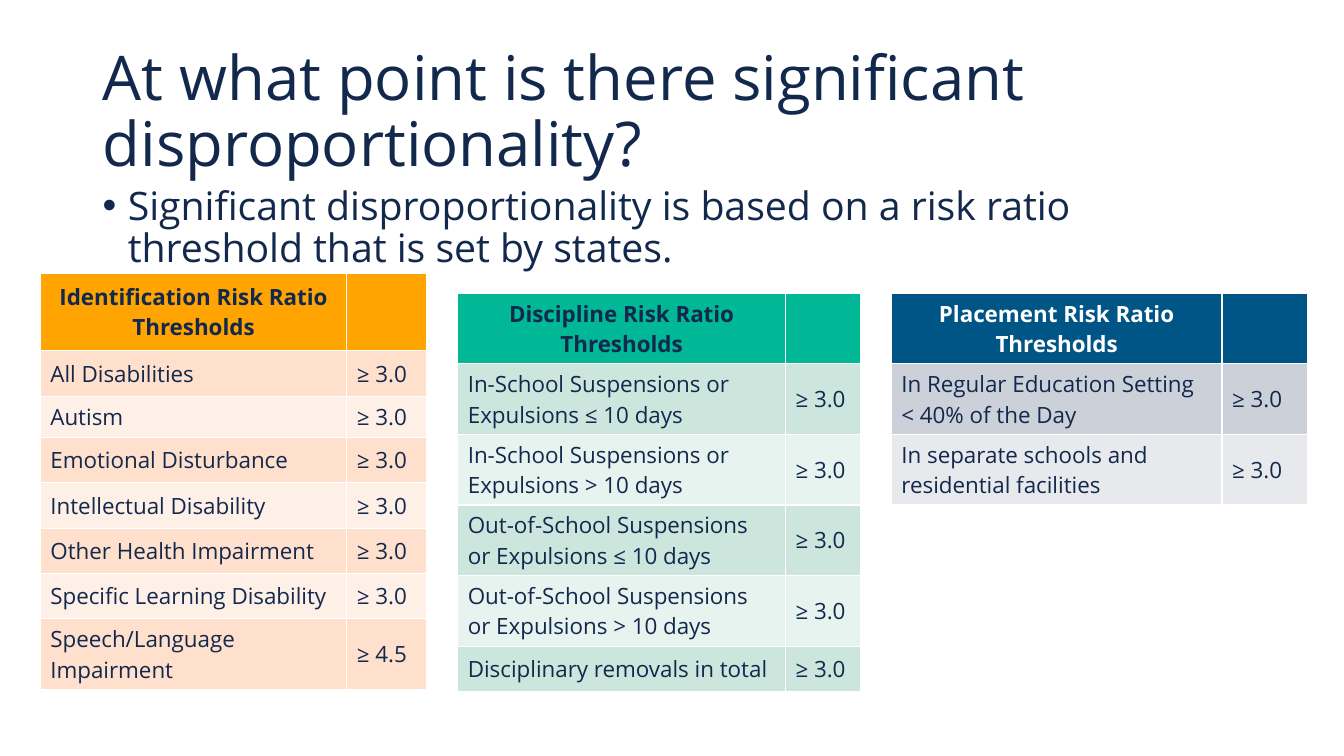
from pptx import Presentation, util as u
from pptx.dml.color import RGBColor
from pptx.enum import text as t
from pptx.oxml import parse_xml
from pptx.oxml.ns import nsdecls

PX = 9144
FONT = "Open Sans"
COLORS = {
    "navy": "12284C", "white": "FFFFFF",
    "orange": "FFA400", "peach": "FFE0CC", "cream": "FFF0E7",
    "green": "00B796", "mint": "CCE6DD", "pale mint": "E7F3EF",
    "blue": "005587", "gray": "CCD1D9", "pale gray": "E7E9ED",
}
IDENTIFICATION = [
    ("Identification Risk Ratio Thresholds", ""),
    ("All Disabilities", "≥ 3.0"),
    ("Autism", "≥ 3.0"),
    ("Emotional Disturbance", "≥ 3.0"),
    ("Intellectual Disability", "≥ 3.0"),
    ("Other Health Impairment", "≥ 3.0"),
    ("Specific Learning Disability", "≥ 3.0"),
    ("Speech/Language Impairment", "≥ 4.5"),
]
DISCIPLINE = [
    ("Discipline Risk Ratio Thresholds", ""),
    ("In-School Suspensions or Expulsions ≤ 10 days", "≥ 3.0"),
    ("In-School Suspensions or Expulsions > 10 days", "≥ 3.0"),
    ("Out-of-School Suspensions or Expulsions ≤ 10 days", "≥ 3.0"),
    ("Out-of-School Suspensions or Expulsions > 10 days", "≥ 3.0"),
    ("Disciplinary removals in total", "≥ 3.0"),
]
PLACEMENT = [
    ("Placement Risk Ratio Thresholds", ""),
    ("In Regular Education Setting\v< 40% of the Day", "≥ 3.0"),
    ("In separate schools and residential facilities", "≥ 3.0"),
]


def px(*lengths):
    """Turn pixel lengths into EMU."""
    return [u.Emu(length * PX) for length in lengths]


def rgb(name):
    """Look up a named colour."""
    return RGBColor.from_string(COLORS[name])


def write(para, words, *, size, color="navy", bold=False, align=t.PP_ALIGN.LEFT, spacing=None):
    """Put formatted text in a paragraph."""
    para.text = words
    para.alignment = align
    para.line_spacing = spacing
    for span in para.runs:
        span.font.name = FONT
        span.font.size = u.Pt(size)
        span.font.bold = bold
        span.font.color.rgb = rgb(color)


def add_title(page, words, place):
    """Place and fill the title placeholder."""
    box = page.shapes.title
    box.left, box.top, box.width, box.height = px(*place)
    frame = box.text_frame
    frame.auto_size = t.MSO_AUTO_SIZE.NONE
    frame.vertical_anchor = t.MSO_ANCHOR.MIDDLE
    write(frame.paragraphs[0], words, size=44, spacing=0.9)


def add_bullet(page, words, place):
    """Add a text box with one bulleted paragraph."""
    frame = page.shapes.add_textbox(*px(*place)).text_frame
    frame.word_wrap = True
    para = frame.paragraphs[0]
    props = para._p.get_or_add_pPr()
    indent = 25 * PX
    props.set("marL", str(indent))
    props.set("indent", str(-indent))
    for element in (
        f'<a:buClr {nsdecls("a")}><a:srgbClr val="{COLORS["navy"]}"/></a:buClr>',
        f'<a:buFont {nsdecls("a")} typeface="Arial"/>',
        f'<a:buChar {nsdecls("a")} char="•"/>',
    ):
        props.append(parse_xml(element))
    write(para, words, size=28, spacing=0.9)


def add_thresholds(page, entries, corner, widths, heights, fills, head_color="navy"):
    """Add a threshold table with a header and two alternating row fills."""
    place = px(*corner, sum(widths), sum(heights))
    table = page.shapes.add_table(len(entries), len(widths), *place).table
    table.horz_banding = False
    for column, width in zip(table.columns, px(*widths)):
        column.width = width
    for row, height in zip(table.rows, px(*heights)):
        row.height = height
    head_fill, *bands = fills
    for i, entry in enumerate(entries):
        head = i == 0
        for cell, words in zip(table.rows[i].cells, entry):
            cell.fill.solid()
            cell.fill.fore_color.rgb = rgb(head_fill if head else bands[(i - 1) % 2])
            cell.vertical_anchor = t.MSO_ANCHOR.MIDDLE
            write(cell.text_frame.paragraphs[0], words, size=16, bold=head,
                  color=head_color if head else "navy",
                  align=t.PP_ALIGN.CENTER if head else t.PP_ALIGN.LEFT)


def main():
    """Build the slide and save it."""
    deck = Presentation()
    deck.slide_width, deck.slide_height = px(1333, 750)
    page = deck.slides.add_slide(deck.slide_layouts.get_by_name("Title Only"))
    add_title(page, "At what point is there significant disproportionality?", (92, 40, 1150, 145))
    add_bullet(page, "Significant disproportionality is based on a risk ratio "
               "threshold that is set by states.", (92, 180, 1150, 496))
    add_thresholds(page, IDENTIFICATION, (40, 271), (304, 79),
                   (77, 45, 41, 45, 45, 45, 45, 70), ("orange", "peach", "cream"))
    add_thresholds(page, DISCIPLINE, (454, 291), (325, 75),
                   (70, 70, 70, 70, 70, 45), ("green", "mint", "pale mint"))
    add_thresholds(page, PLACEMENT, (884, 291), (328, 85),
                   (70, 70, 70), ("blue", "gray", "pale gray"), head_color="white")
    deck.save("out.pptx")


if __name__ == "__main__":
    main()
